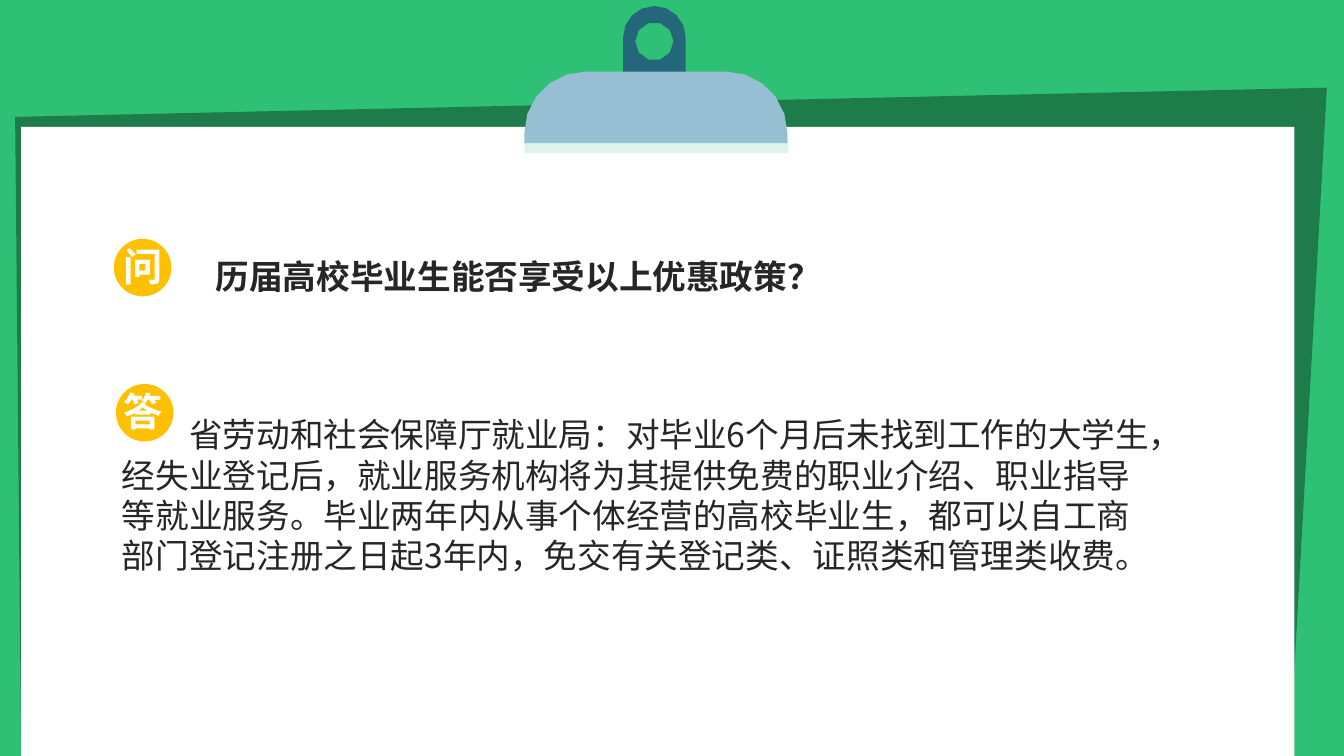
from math import cos, radians, sin

from lxml.etree import SubElement
from pptx import Presentation
from pptx.dml.color import RGBColor
from pptx.enum.shapes import MSO_SHAPE
from pptx.enum.text import MSO_ANCHOR, MSO_AUTO_SIZE, PP_ALIGN
from pptx.oxml.ns import qn
from pptx.util import Inches, Pt

GREEN = RGBColor(0x2E, 0xC0, 0x74)
DARK_GREEN = RGBColor(0x1E, 0x7C, 0x4B)
WHITE = RGBColor(0xFF, 0xFF, 0xFF)
TEAL = RGBColor(0x24, 0x66, 0x7A)
MINT = RGBColor(0xDC, 0xF4, 0xED)
PALE_BLUE = RGBColor(0x97, 0xBF, 0xD3)
AMBER = RGBColor(0xFF, 0xC0, 0x00)
INK = RGBColor(0x26, 0x26, 0x26)
FONT = "Noto Sans CJK SC"
LINE_PITCH = 1.2

QUESTION = "历届高校毕业生能否享受以上优惠政策？"
ANSWER = (
    "省劳动和社会保障厅就业局：对毕业6个月后未找到工作的大学生，"
    "经失业登记后，就业服务机构将为其提供免费的职业介绍、职业指导等就业服务。"
    "毕业两年内从事个体经营的高校毕业生，都可以自工商部门登记注册之日起3年内，"
    "免交有关登记类、证照类和管理类收费。"
)


def paint(shape, color):
    shape.shadow.inherit = False
    shape.fill.solid()
    shape.fill.fore_color.rgb = color
    shape.line.fill.background()


def add_block(slide, preset, box, color):
    paint(slide.shapes.add_shape(preset, *map(Inches, box)), color)


def arc(center_x, center_y, radius, start, end, steps):
    """Points along an arc, with angles in degrees and y pointing down."""
    angles = [radians(start + (end - start) * i / steps) for i in range(steps + 1)]
    return [(center_x + radius * cos(a), center_y + radius * sin(a)) for a in angles]


def add_outline(slide, color, *contours):
    builder = None
    for contour in contours:
        points = [(Inches(x), Inches(y)) for x, y in contour]
        if builder is None:
            builder = slide.shapes.build_freeform(*points[0])
        else:
            builder.move_to(*points[0])
        builder.add_line_segments(points[1:], close=True)
    paint(builder.convert_to_shape(), color)


def add_dome(slide, left, top, right, bottom, radius, color):
    middle = top + radius
    add_outline(slide, color, [
        (left, bottom),
        *arc(left + radius, middle, radius, 180, 270, 5),
        *arc(right - radius, middle, radius, 270, 360, 5),
        (right, bottom),
    ])


def fill_text(shape, text, box, size, color, bold=False, margin_top=0.05, indent=0):
    shape.left, shape.top, shape.width, shape.height = map(Inches, box)
    frame = shape.text_frame
    frame.text = text
    frame.word_wrap = True
    frame.auto_size = MSO_AUTO_SIZE.SHAPE_TO_FIT_TEXT
    frame.vertical_anchor = MSO_ANCHOR.TOP
    frame.margin_top = Inches(margin_top)
    paragraph = frame.paragraphs[0]
    paragraph.alignment = PP_ALIGN.LEFT
    paragraph.line_spacing = Pt(size * LINE_PITCH)
    paragraph.space_before = Pt(0)
    # No bullet, first line indented
    properties = paragraph._p.get_or_add_pPr()
    properties.set("marL", "0")
    properties.set("indent", str(Pt(indent)))
    SubElement(properties, qn("a:buNone"))
    for run in paragraph.runs:
        run.font.name = FONT
        run.font.size = Pt(size)
        run.font.bold = bold
        run.font.color.rgb = color
        SubElement(run.font._element, qn("a:ea"), typeface=FONT)


def fill_placeholder(slide, shape, text, box, **options):
    fill_text(shape, text, box, 24, INK, **options)
    # Bring the text in front of the paper
    slide.shapes._spTree.append(shape._element)


def add_badge(slide, left, top, label, label_top):
    add_block(slide, MSO_SHAPE.OVAL, (left, top, 0.57, 0.57), AMBER)
    box = (1.13, label_top, 0.54, 0.57)
    fill_text(slide.shapes.add_textbox(*map(Inches, box)), label, box, 28, WHITE, bold=True)


def add_clipboard(slide):
    # Board and paper
    add_outline(slide, DARK_GREEN, [(0.15, 1.16), (13.16, 0.87), (12.79, 7.5), (0.21, 7.5)])
    add_block(slide, MSO_SHAPE.RECTANGLE, (0.21, 1.26, 12.63, 6.24), WHITE)
    # Clip: ring tab, lower edge and cover
    tab = [(6.18, 0.98), *arc(6.49, 0.37, 0.31, 180, 360, 8), (6.8, 0.97)]
    hole = arc(6.49, 0.41, 0.19, 360, 0, 10)[:-1]
    add_outline(slide, TEAL, tab, hole)
    add_dome(slide, 5.2, 0.81, 7.82, 1.52, 0.61, MINT)
    add_dome(slide, 5.2, 0.71, 7.81, 1.42, 0.61, PALE_BLUE)


def main():
    presentation = Presentation()
    presentation.slide_width = Inches(13.33)
    presentation.slide_height = Inches(7.5)
    slide = presentation.slides.add_slide(presentation.slide_layouts[1])
    slide.background.fill.solid()
    slide.background.fill.fore_color.rgb = GREEN

    add_clipboard(slide)

    # Question and answer
    fill_placeholder(slide, slide.placeholders[1], ANSWER,
                     (1.11, 3.66, 10.4, 2.12), margin_top=0.45, indent=48)
    fill_placeholder(slide, slide.shapes.title, QUESTION,
                     (2.04, 2.49, 8.38, 0.5), bold=True)
    add_badge(slide, 1.13, 2.37, "问", 2.36)
    add_badge(slide, 1.15, 3.81, "答", 3.79)

    presentation.save("out.pptx")


if __name__ == "__main__":
    main()
